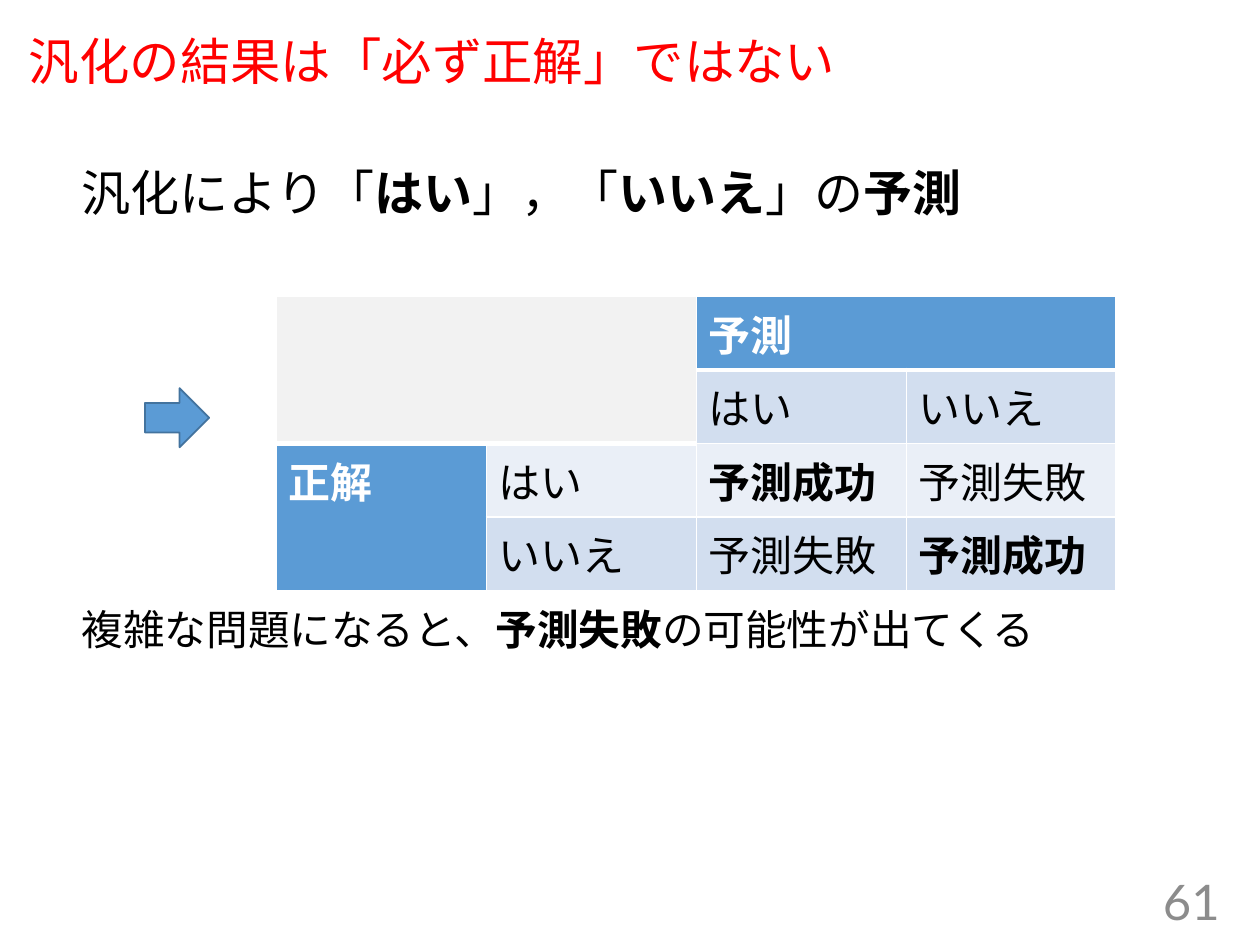
from lxml import etree
from pptx import Presentation
from pptx.dml.color import RGBColor
from pptx.enum import shapes, text
from pptx.oxml.ns import qn
from pptx.util import Pt

RED = RGBColor(0xFF, 0, 0)
BLACK = RGBColor(0, 0, 0)
WHITE = RGBColor(0xFF, 0xFF, 0xFF)
GRAY = RGBColor(0x8C, 0x8C, 0x8C)
BLUE = RGBColor(0x5B, 0x9B, 0xD5)
EDGE = RGBColor(0x43, 0x73, 0x9E)
BLANK = RGBColor(0xF2, 0xF2, 0xF2)
DARK = RGBColor(0xD2, 0xDE, 0xEF)
PALE = RGBColor(0xEA, 0xEF, 0xF7)


def write(para, parts, size, color, name):
    """Add text parts to a paragraph, every second part bold."""
    for i, part in enumerate(parts):
        run = para.add_run()
        run.text = part
        look = {"size": Pt(size), "name": name, "bold": i % 2 == 1}
        for key, val in look.items():
            setattr(run.font, key, val)
        run.font.color.rgb = color


def label(slide, box, parts, size, color=BLACK, mid=False, **form):
    """Place a one-paragraph text box with the given paragraph format."""
    frame = slide.shapes.add_textbox(*map(Pt, box)).text_frame
    frame.word_wrap = True
    if mid:
        frame.vertical_anchor = text.MSO_ANCHOR.MIDDLE
    para = frame.paragraphs[0]
    for key, val in form.items():
        setattr(para, key, val)
    write(para, parts, size, color, "Lato")


def arrow(slide, box):
    """Place the right-pointing block arrow."""
    shape = slide.shapes.add_shape(shapes.MSO_SHAPE.RIGHT_ARROW, *map(Pt, box))
    shape.shadow.inherit = False
    shape.fill.solid()
    shape.fill.fore_color.rgb = BLUE
    shape.line.color.rgb = EDGE
    shape.line.width = Pt(1)


def border(cell, **widths):
    """Draw white borders of the given widths around a cell."""
    props = cell._tc.get_or_add_tcPr()
    for side in "LRTB":
        line = etree.SubElement(props, qn(f"a:ln{side}"), w=str(Pt(widths.get(side, 1))))
        fill = etree.SubElement(line, qn("a:solidFill"))
        etree.SubElement(fill, qn("a:srgbClr"), val=str(WHITE))


def matrix(slide, box):
    """Place the table of predictions against correct answers."""
    grid = slide.shapes.add_table(4, 4, *map(Pt, box)).table
    rows = [
        [("", BLANK), ("", BLANK), ("予測", BLUE), ("", BLUE)],
        [("", BLANK), ("", BLANK), ("はい", DARK), ("いいえ", DARK)],
        [("正解", BLUE), ("はい", PALE), ("予測成功", PALE), ("予測失敗", PALE)],
        [("", BLUE), ("いいえ", DARK), ("予測失敗", DARK), ("予測成功", DARK)],
    ]
    for r, row in enumerate(rows):
        for c, (word, fill) in enumerate(row):
            cell = grid.cell(r, c)
            head = 0 if c > 1 else 1
            thick = {"B": 3} if r == head or (r, c) == (0, 0) else {}
            if r == head + 1:
                thick["T"] = 3
            border(cell, **thick)
            cell.fill.solid()
            cell.fill.fore_color.rgb = fill
            if word:
                parts = ["", word] if fill == BLUE or word == "予測成功" else [word]
                ink = WHITE if fill == BLUE else BLACK
                write(cell.text_frame.paragraphs[0], parts, 24, ink, "Calibri")
    for start, end in [((0, 0), (1, 1)), ((0, 2), (0, 3)), ((2, 0), (3, 0))]:
        grid.cell(*start).merge(grid.cell(*end))


def main():
    """Build and save the slide."""
    deck = Presentation()
    deck.slide_width, deck.slide_height = Pt(720), Pt(540)
    slide = deck.slides.add_slide(deck.slide_layouts[6])
    label(slide, (9.4, 19.4, 695, 34), ["汎化の結果は「必ず正解」ではない"], 28.8, RED,
          mid=True, line_spacing=0.9)
    label(slide, (542, 500.4, 162, 29), ["61"], 28, GRAY, mid=True,
          alignment=text.PP_ALIGN.RIGHT)
    label(slide, (39.6, 89.3, 588, 43),
          ["汎化により「", "はい", "」，「", "いいえ", "」の", "予測"], 28,
          space_before=Pt(10))
    arrow(slide, (82.8, 221.8, 36.7, 33.8))
    matrix(slide, (157.9, 169.4, 480, 168))
    label(slide, (39.6, 344.9, 588, 43),
          ["複雑な問題になると、", "予測失敗", "の可能性が出てくる"], 23.8,
          line_spacing=0.9, space_before=Pt(10))
    deck.save("out.pptx")


if __name__ == "__main__":
    main()
